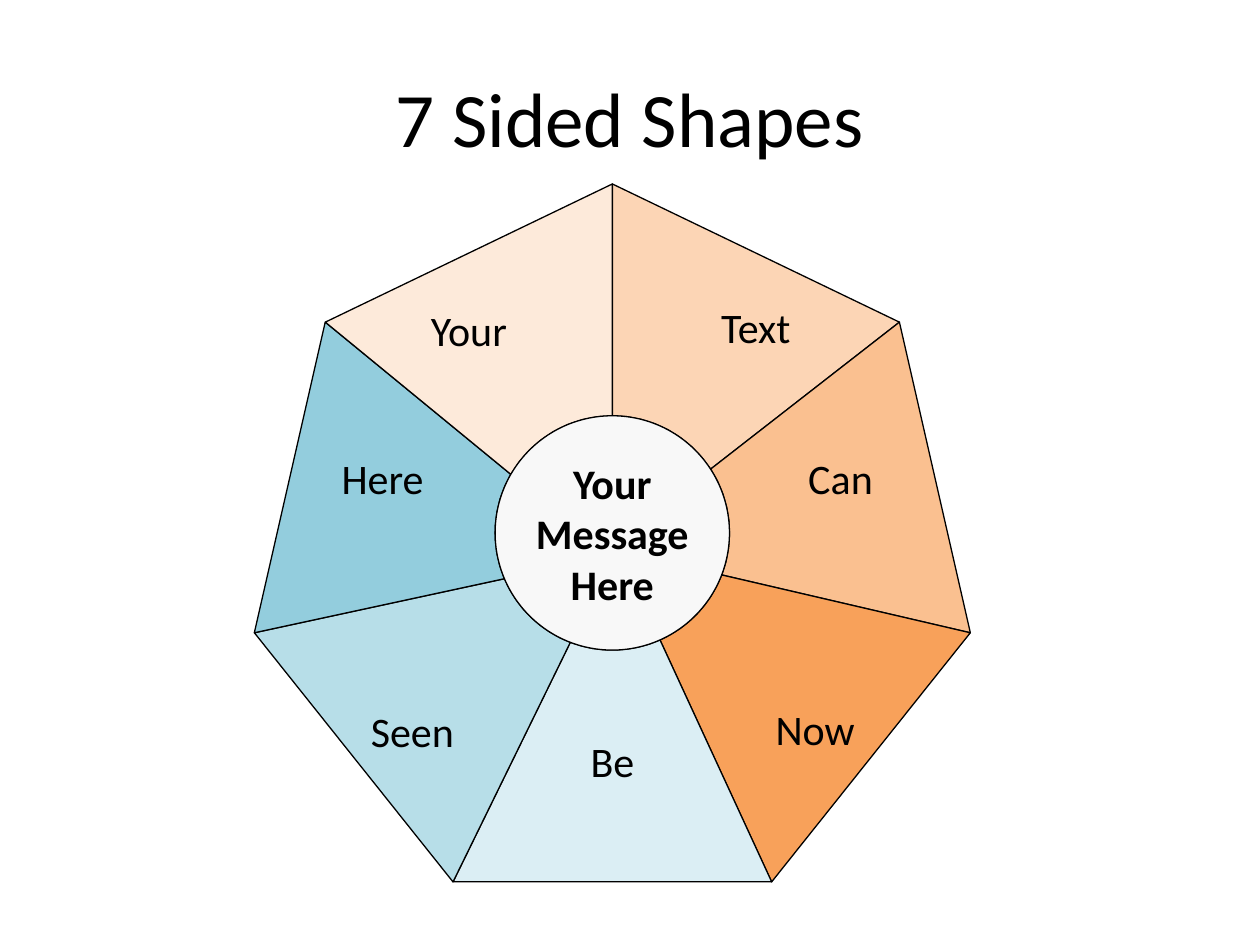
import math

import pptx
import pptx.dml.color
import pptx.enum.shapes
import pptx.enum.text
import pptx.util

RGBColor = pptx.dml.color.RGBColor
BLACK = RGBColor(0x00, 0x00, 0x00)
HUB_GREY = RGBColor(0xF8, 0xF8, 0xF8)

WIDTH = pptx.util.Inches(10)
HEIGHT = pptx.util.Inches(7.5)

# Label, fill and the hub angle (clockwise from the top) where each wedge starts
WEDGES = [
    ("Text", RGBColor(0xFC, 0xD5, 0xB5), 0),
    ("Can", RGBColor(0xFA, 0xC0, 0x90), 57),
    ("Now", RGBColor(0xF8, 0xA1, 0x5A), 111),
    ("Be", RGBColor(0xDB, 0xEE, 0xF4), 156),
    ("Seen", RGBColor(0xB7, 0xDE, 0xE8), 201),
    ("Here", RGBColor(0x93, 0xCD, 0xDD), 247),
    ("Your", RGBColor(0xFD, 0xEA, 0xDA), 300),
]
ARC_STEPS = 8


def across(percent):
    return round(WIDTH * percent / 100)


def down(percent):
    return round(HEIGHT * percent / 100)


CENTRE_X = across(48.6)
HEPTAGON_Y, HEPTAGON_RADIUS = down(58.32), across(29.14)
HUB_Y, HUB_RADIUS = down(56.4), across(9.3)

TITLE_FONT = {"name": "Calibri", "size": pptx.util.Pt(44)}
LABEL_FONT = {"name": "Calibri", "size": pptx.util.Pt(24)}
HUB_FONT = {**LABEL_FONT, "bold": True}


def polar(centre_y, radius, degrees):
    """Point at a clockwise angle from the top of a circle."""
    angle = math.radians(degrees)
    return (round(CENTRE_X + radius * math.sin(angle)),
            round(centre_y - radius * math.cos(angle)))


def write(shape, text, font):
    frame = shape.text_frame
    frame.text = text
    frame_format = {
        "word_wrap": True,
        "vertical_anchor": pptx.enum.text.MSO_ANCHOR.MIDDLE,
        "margin_left": 0,
        "margin_right": 0,
    }
    for name, value in frame_format.items():
        setattr(frame, name, value)
    for para in frame.paragraphs:
        para.alignment = pptx.enum.text.PP_ALIGN.CENTER
        for span in para.runs:
            for name, value in font.items():
                setattr(span.font, name, value)
            span.font.color.rgb = BLACK


def paint(shape, colour):
    shape.shadow.inherit = False
    shape.fill.solid()
    shape.fill.fore_color.rgb = colour
    shape.line.color.rgb = BLACK
    shape.line.width = 0


def add_title(page, text):
    box = page.shapes.add_textbox(across(5), down(4), across(90), down(16.67))
    write(box, text, TITLE_FONT)


def add_wedge(page, index):
    """Draw one side of the heptagon, cut off by the hub's arc."""
    label, colour, start = WEDGES[index]
    end = WEDGES[index + 1][2] if index + 1 < len(WEDGES) else 360
    corners = [polar(HEPTAGON_Y, HEPTAGON_RADIUS, 360 * side / len(WEDGES))
               for side in (index, index + 1)]
    arc = [polar(HUB_Y, HUB_RADIUS, end + (start - end) * step / ARC_STEPS)
           for step in range(ARC_STEPS + 1)]
    builder = page.shapes.build_freeform(*corners[0])
    builder.add_line_segments(corners[1:] + arc, close=True)
    wedge = builder.convert_to_shape()
    paint(wedge, colour)
    write(wedge, label, LABEL_FONT)


def add_hub(page, text):
    hub = page.shapes.add_shape(
        pptx.enum.shapes.MSO_SHAPE.OVAL,
        CENTRE_X - HUB_RADIUS, HUB_Y - HUB_RADIUS,
        2 * HUB_RADIUS, 2 * HUB_RADIUS)
    paint(hub, HUB_GREY)
    write(hub, text, HUB_FONT)


def main():
    deck = pptx.Presentation()
    deck.slide_width, deck.slide_height = WIDTH, HEIGHT
    page = deck.slides.add_slide(deck.slide_layouts[6])
    add_title(page, "7 Sided Shapes")
    for index in range(len(WEDGES)):
        add_wedge(page, index)
    add_hub(page, "Your\nMessage\vHere")
    deck.save("out.pptx")


if __name__ == "__main__":
    main()
